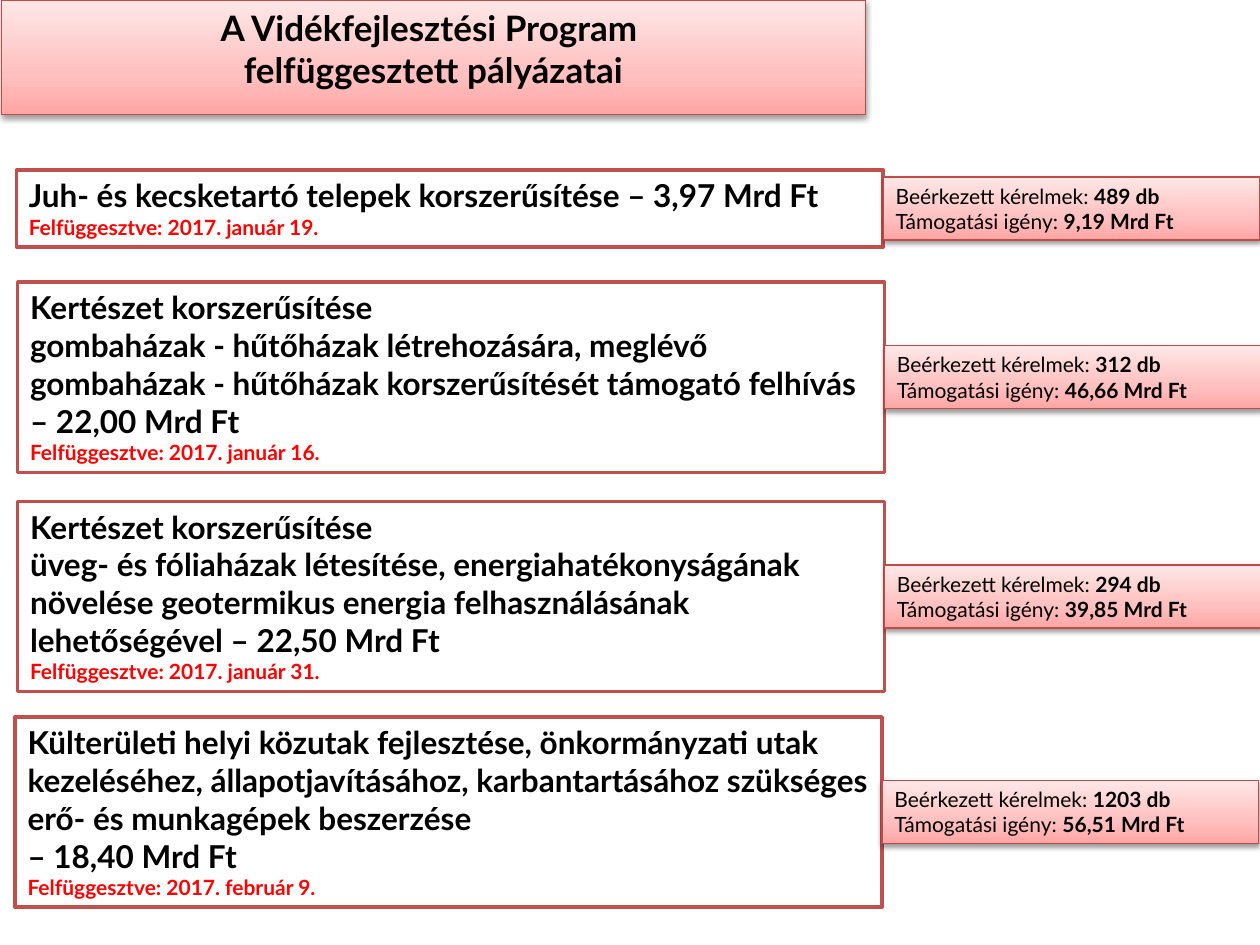
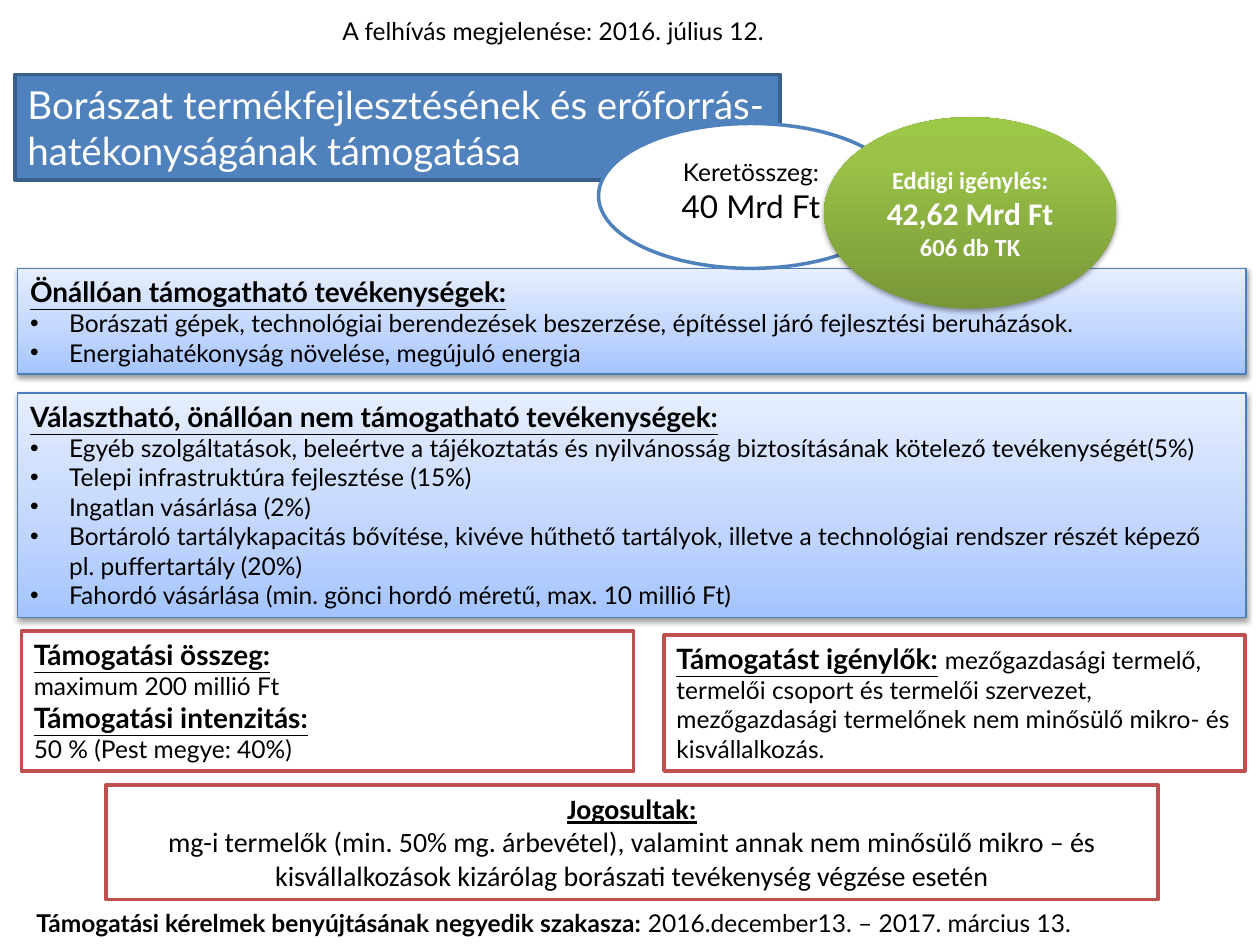
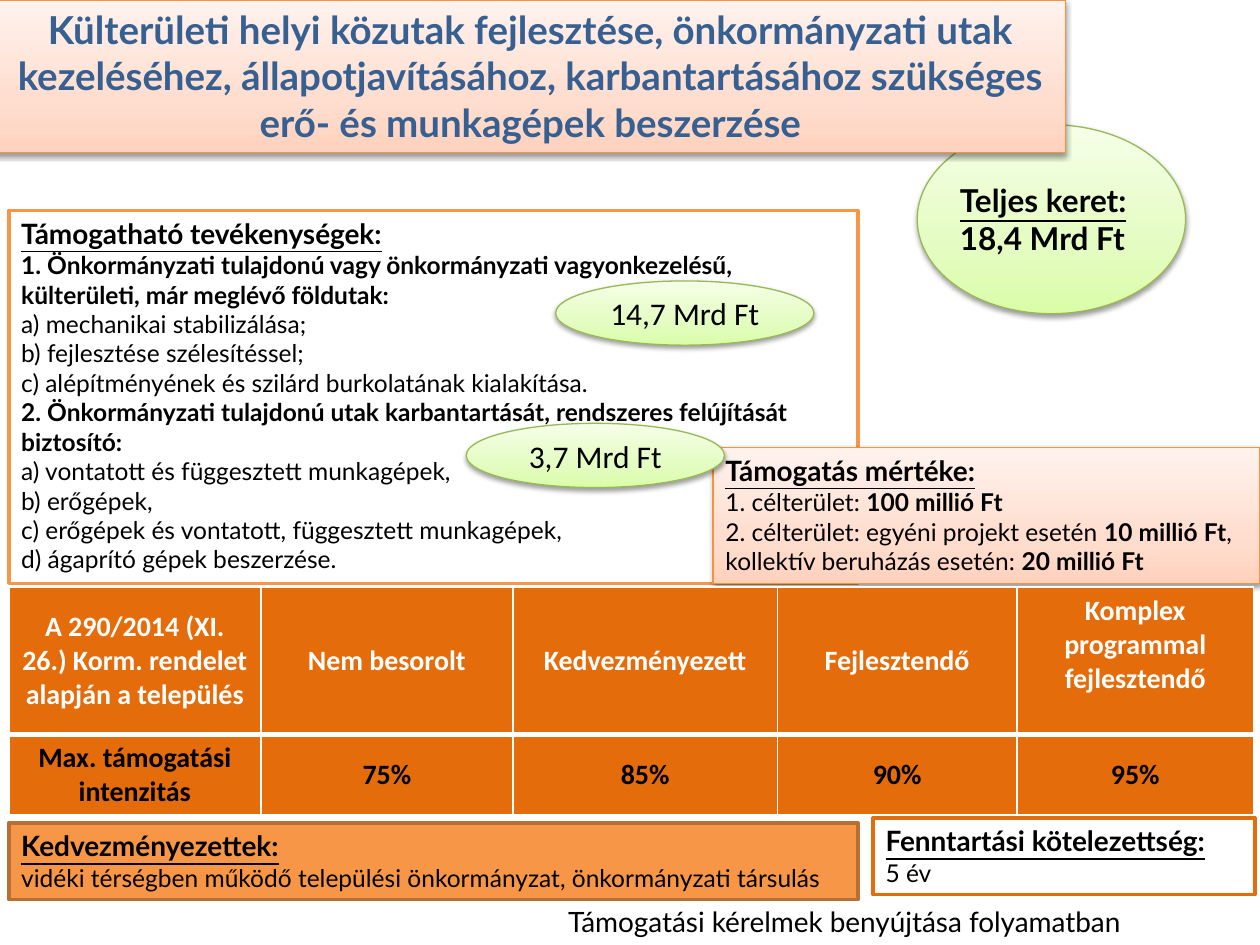
from dataclasses import dataclass
from lxml import etree
from pptx import Presentation
from pptx.dml.color import RGBColor
from pptx.enum.shapes import MSO_SHAPE
from pptx.enum.text import MSO_ANCHOR, PP_ALIGN
from pptx.oxml.ns import qn
from pptx.util import Inches, Pt

BLACK, WHITE, RED = "000000", "FFFFFF", "FF0000"
CRIMSON, BLUE, ORANGE, DEEP_ORANGE = "C0504D", "4F81BD", "F79646", "E46C0A"
PINK_GRADIENT = [(0, "FFA6A5"), (35, "FFC0BF"), (100, "FFE7E7")]
BLUE_GRADIENT = [(0, "A4C4FF"), (35, "BFD4FF"), (100, "E6EEFF")]
PEACH_GRADIENT = [(0, "FFD2BD"), (35, "FFDED0"), (100, "FFF2ED")]
LIME_GRADIENT = [(0, "DAFDA7"), (35, "E4FCC2"), (100, "F5FFE7")]
GREEN_GRADIENT = [(0, "779737"), (80, "9BC348"), (100, "9DC746")]
PINK_PANEL = {"fill": PINK_GRADIENT, "line": "BF4C48", "line_width": 0.75}
BLUE_PANEL = {"fill": BLUE_GRADIENT, "line": "4B7EBC", "line_width": 0.75}
PEACH_PANEL = {"fill": PEACH_GRADIENT, "line": "F69240", "line_width": 0.75}
LIME_OVAL = {"fill": LIME_GRADIENT, "line": "98B955", "line_width": 0.75, "kind": MSO_SHAPE.OVAL}


@dataclass
class Box:
    """A rectangle on the slide, in inches."""
    left: float
    top: float
    width: float
    height: float

    def lengths(self):
        """Return the four measures as lengths."""
        return [Inches(value) for value in (self.left, self.top, self.width, self.height)]


@dataclass
class Run:
    """A stretch of text in one style."""
    text: str
    size: float = 14
    bold: bool = False
    color: str = BLACK
    underline: bool = False


def heading(text, size=16):
    """Return an underlined bold run."""
    return Run(text, size, True, underline=True)


def bold(text, size=14, color=BLACK):
    """Return a bold run."""
    return Run(text, size, True, color)


def rgb(color):
    """Turn a hex string into a colour."""
    return RGBColor.from_string(color)


def add_bullet(paragraph):
    """Give a paragraph a hanging round bullet."""
    properties = paragraph._p.get_or_add_pPr()
    properties.set("marL", str(Inches(0.31)))
    properties.set("indent", str(-Inches(0.31)))
    font = etree.SubElement(properties, qn("a:buFont"))
    font.set("typeface", "Arial")
    etree.SubElement(properties, qn("a:buChar")).set("char", "•")


def write(frame, paragraphs, align=PP_ALIGN.LEFT, font="Lato", bullets=False):
    """Fill a text frame; each paragraph is a run or a list of runs."""
    for index, runs in enumerate(paragraphs):
        paragraph = frame.add_paragraph() if index else frame.paragraphs[0]
        paragraph.alignment = align
        if bullets and index:
            add_bullet(paragraph)
        for item in runs if isinstance(runs, list) else [runs]:
            run = paragraph.add_run()
            run.text = item.text
            run.font.name = font
            run.font.size = Pt(item.size)
            run.font.bold = item.bold
            run.font.underline = item.underline
            run.font.color.rgb = rgb(item.color)


def paint_gradient(shape, stops):
    """Fill a shape with a gradient that rises from its bottom edge."""
    shape.fill.gradient()
    shape.fill.gradient_angle = 90
    stop_list = shape.element.spPr.find(qn("a:gradFill")).find(qn("a:gsLst"))
    for stop in list(stop_list):
        stop_list.remove(stop)
    for position, color in stops:
        stop = etree.SubElement(stop_list, qn("a:gs"), pos=str(position * 1000))
        etree.SubElement(stop, qn("a:srgbClr"), val=color)


def add_soft_shadow(shape, opacity=38):
    """Give a shape a soft shadow below it."""
    effects = shape.element.spPr.find(qn("a:effectLst"))
    shadow = etree.SubElement(effects, qn("a:outerShdw"), blurRad=str(Pt(3.1)),
                              dist=str(Pt(1.6)), dir="5400000", rotWithShape="0")
    color = etree.SubElement(shadow, qn("a:srgbClr"), val=BLACK)
    etree.SubElement(color, qn("a:alpha"), val=str(opacity * 1000))


def add_panel(slide, box, paragraphs=(), fill=WHITE, line=CRIMSON, line_width=2,
              kind=MSO_SHAPE.RECTANGLE, **text_style):
    """Draw a panel with text; a gradient fill brings a shadow."""
    shape = slide.shapes.add_shape(kind, *box.lengths())
    shape.shadow.inherit = False
    if isinstance(fill, list):
        paint_gradient(shape, fill)
        add_soft_shadow(shape)
    else:
        shape.fill.solid()
        shape.fill.fore_color.rgb = rgb(fill)
    if line:
        shape.line.color.rgb = rgb(line)
        shape.line.width = Pt(line_width)
    else:
        shape.line.fill.background()
    frame = shape.text_frame
    frame.word_wrap = True
    is_oval = kind == MSO_SHAPE.OVAL
    frame.vertical_anchor = MSO_ANCHOR.MIDDLE if is_oval else MSO_ANCHOR.TOP
    write(frame, paragraphs, **text_style)


def add_label(slide, box, paragraphs, **text_style):
    """Place text without a frame."""
    frame = slide.shapes.add_textbox(*box.lengths()).text_frame
    frame.word_wrap = True
    write(frame, paragraphs, **text_style)


def add_suspended_call(slide, box, lines, date, requests, demand):
    """Draw a suspended call with its figures centred on the right edge."""
    paragraphs = [bold(line, 18) for line in lines]
    add_panel(slide, box, paragraphs + [bold(f"Felfüggesztve: {date}", 12, RED)])
    badge_height = 0.5
    badge = Box(box.left + box.width, box.top + (box.height - badge_height) / 2, 2.99, badge_height)
    add_panel(slide, badge, [
        [Run("Beérkezett kérelmek: ", 12), bold(requests, 12)],
        [Run("Támogatási igény: ", 12), bold(demand, 12)],
    ], **PINK_PANEL)


def build_suspended_calls(slide):
    """Build the overview of suspended calls."""
    add_panel(slide, Box(0.01, 0, 6.86, 0.91), [
        bold("A Vidékfejlesztési Program ", 20), bold("felfüggesztett pályázatai", 20),
    ], align=PP_ALIGN.CENTER, **PINK_PANEL)
    calls = [
        (0.13, 1.35, 0.61, ["Juh- és kecsketartó telepek korszerűsítése – 3,97 Mrd Ft"],
         "2017. január 19.", "489 db", "9,19 Mrd Ft"),
        (0.14, 2.24, 1.51,
         ["Kertészet korszerűsítése",
          "gombaházak - hűtőházak létrehozására, meglévő gombaházak - hűtőházak "
          "korszerűsítését támogató felhívás – 22,00 Mrd Ft"],
         "2017. január 16.", "312 db", "46,66 Mrd Ft"),
        (0.14, 3.98, 1.51,
         ["Kertészet korszerűsítése",
          "üveg- és fóliaházak létesítése, energiahatékonyságának növelése geotermikus "
          "energia felhasználásának lehetőségével – 22,50 Mrd Ft"],
         "2017. január 31.", "294 db", "39,85 Mrd Ft"),
        (0.12, 5.69, 1.51,
         ["Külterületi helyi közutak fejlesztése, önkormányzati utak kezeléséhez, "
          "állapotjavításához, karbantartásához szükséges erő- és munkagépek beszerzése",
          "– 18,40 Mrd Ft"],
         "2017. február 9.", "1203 db", "56,51 Mrd Ft"),
    ]
    for left, top, height, *details in calls:
        add_suspended_call(slide, Box(left, top, 6.88, height), *details)


def add_budget_ovals(slide, box):
    """Draw the budget oval and the demand oval that overlaps it."""
    add_panel(slide, Box(box.left, box.top + 0.05, 2.42, 1.15), line=BLUE, kind=MSO_SHAPE.OVAL)
    add_label(slide, Box(box.left + 0.52, box.top + 0.27, 1.38, 0.64),
              [Run("Keretösszeg:"), Run("40 Mrd Ft", 18)], align=PP_ALIGN.CENTER)
    demand_width = 2.32
    add_panel(slide, Box(box.left + box.width - demand_width, box.top, demand_width, box.height), [
        bold("Eddigi igénylés:", 14, WHITE), bold("42,62 Mrd Ft", 18, WHITE),
        bold("606 db TK", 14, WHITE),
    ], fill=GREEN_GRADIENT, line=None, kind=MSO_SHAPE.OVAL, align=PP_ALIGN.CENTER, font="Calibri")


def build_winery_call(slide):
    """Build the details of the winery call."""
    add_label(slide, Box(2.62, 0.08, 3.64, 0.34), [Run("A felhívás megjelenése: 2016. július 12.")])
    add_panel(slide, Box(0.12, 0.59, 6.07, 0.84), [
        Run("Borászat termékfejlesztésének és erőforrás-hatékonyságának támogatása", 22, color=WHITE),
    ], fill=BLUE, line="3A5F8C")
    add_panel(slide, Box(0.14, 2.13, 9.75, 0.84), [
        heading("Önállóan támogatható tevékenységek:"),
        Run("Borászati gépek, technológiai berendezések beszerzése, építéssel járó "
            "fejlesztési beruházások."),
        Run("Energiahatékonyság növelése, megújuló energia"),
    ], bullets=True, **BLUE_PANEL)
    add_panel(slide, Box(0.14, 3.12, 9.75, 1.78), [
        heading("Választható, önállóan nem támogatható tevékenységek:"),
        Run("Egyéb szolgáltatások, beleértve a tájékoztatás és nyilvánosság biztosításának "
            "kötelező tevékenységét(5%)"),
        Run("Telepi infrastruktúra fejlesztése (15%)"),
        Run("Ingatlan vásárlása (2%)"),
        Run("Bortároló tartálykapacitás bővítése, kivéve hűthető tartályok, illetve a "
            "technológiai rendszer részét képező pl. puffertartály (20%)"),
        Run("Fahordó vásárlása (min. gönci hordó méretű, max. 10 millió Ft)"),
    ], bullets=True, **BLUE_PANEL)
    add_budget_ovals(slide, Box(4.75, 0.93, 4.11, 1.52))
    add_panel(slide, Box(0.17, 5.01, 4.86, 1.11), [
        heading("Támogatási összeg:"), Run("maximum 200 millió Ft"),
        heading("Támogatási intenzitás:"), Run("50 % (Pest megye: 40%)"),
    ])
    add_panel(slide, Box(5.27, 5.04, 4.61, 1.08), [[
        heading("Támogatást igénylők:"), bold(" ", 16),
        Run("mezőgazdasági termelő, termelői csoport és termelői szervezet, "
            "mezőgazdasági termelőnek nem minősülő mikro- és kisvállalkozás."),
    ]])
    add_panel(slide, Box(0.84, 6.23, 8.35, 0.91), [
        heading("Jogosultak:"),
        Run("mg-i termelők (min. 50% mg. árbevétel), valamint annak nem minősülő mikro – és "
            "kisvállalkozások kizárólag borászati tevékenység végzése esetén", 16),
    ], align=PP_ALIGN.CENTER, font="Calibri")
    add_label(slide, Box(0.19, 7.16, 9.21, 0.34), [[
        bold("Támogatási kérelmek benyújtásának negyedik szakasza:"),
        Run(" 2016.december13. – 2017. március 13."),
    ]])


def format_cell(cell, text, color, borders):
    """Style one table cell, with border widths by side."""
    cell_properties = cell._tc.get_or_add_tcPr()
    for side, width in borders.items():
        border = etree.SubElement(cell_properties, qn(f"a:ln{side}"), w=str(Pt(width)))
        fill = etree.SubElement(border, qn("a:solidFill"))
        etree.SubElement(fill, qn("a:srgbClr"), val=WHITE)
    cell.fill.solid()
    cell.fill.fore_color.rgb = rgb(DEEP_ORANGE)
    cell.vertical_anchor = MSO_ANCHOR.MIDDLE
    write(cell.text_frame, [bold(text, 16, color)], align=PP_ALIGN.CENTER, font="Calibri")


def add_intensity_table(slide, box):
    """Draw the table of support intensity by type of settlement."""
    rows = [
        ["A 290/2014 (XI. 26.) Korm. rendelet alapján a település", "Nem besorolt",
         "Kedvezményezett", "Fejlesztendő", "Komplex programmal fejlesztendő"],
        ["Max. támogatási intenzitás", "75%", "85%", "90%", "95%"],
    ]
    table = slide.shapes.add_table(2, 5, *box.lengths()).table
    for column, width in zip(table.columns, [2, 2, 2.1, 1.9, 1.88]):
        column.width = Inches(width)
    header_height = 1.17
    for row, height in zip(table.rows, [header_height, box.height - header_height]):
        row.height = Inches(height)
    styles = [(WHITE, {"L": 1, "R": 1, "T": 1, "B": 3}), (BLACK, {"L": 1, "R": 1, "T": 3, "B": 1})]
    for row_index, (texts, style) in enumerate(zip(rows, styles)):
        for column_index, text in enumerate(texts):
            format_cell(table.cell(row_index, column_index), text, *style)
    table.cell(0, 4).vertical_anchor = MSO_ANCHOR.TOP


def add_activities(slide, box):
    """Draw the supported activities."""
    add_panel(slide, box, [
        heading("Támogatható tevékenységek:"),
        bold("1. Önkormányzati tulajdonú vagy önkormányzati vagyonkezelésű, külterületi, "
             "már meglévő földutak:"),
        Run("a) mechanikai stabilizálása;"),
        Run("b) fejlesztése szélesítéssel;"),
        Run("c) alépítményének és szilárd burkolatának kialakítása."),
        bold("2. Önkormányzati tulajdonú utak karbantartását, rendszeres felújítását biztosító:"),
        Run("a) vontatott és függesztett munkagépek,"),
        Run("b) erőgépek,"),
        Run("c) erőgépek és vontatott, függesztett munkagépek,"),
        Run("d) ágaprító gépek beszerzése."),
    ], line=ORANGE)


def build_road_call(slide):
    """Build the details of the rural road call."""
    add_panel(slide, Box(7.28, 0.99, 2.13, 1.5), **LIME_OVAL)
    add_panel(slide, Box(-0.04, 0, 8.5, 1.21), [
        bold("Külterületi helyi közutak fejlesztése, önkormányzati utak kezeléséhez, "
             "állapotjavításához, karbantartásához szükséges erő- és munkagépek beszerzése",
             22, "376092"),
    ], align=PP_ALIGN.CENTER, **PEACH_PANEL)
    add_label(slide, Box(7.52, 1.39, 1.66, 0.71),
              [heading("Teljes keret:", 18), bold("18,4 Mrd Ft", 18)])
    add_activities(slide, Box(0.07, 1.67, 6.74, 2.96))
    add_panel(slide, Box(5.66, 3.55, 4.34, 1.08), [
        heading("Támogatás mértéke:"),
        [Run("1. célterület: "), bold("100 millió Ft")],
        [Run("2. célterület: egyéni projekt esetén "), bold("10 millió Ft"),
         Run(", kollektív beruházás esetén: "), bold("20 millió Ft")],
    ], **PEACH_PANEL)
    for left, top, amount in [(4.41, 2.23, "14,7 Mrd Ft"), (3.7, 3.36, "3,7 Mrd Ft")]:
        add_panel(slide, Box(left, top, 2.05, 0.51), [Run(amount, 18)],
                  align=PP_ALIGN.CENTER, font="Calibri", **LIME_OVAL)
    add_intensity_table(slide, Box(0.07, 4.66, 9.88, 1.8))
    add_panel(slide, Box(0.07, 6.53, 6.74, 0.61), [
        heading("Kedvezményezettek:"),
        Run("vidéki térségben működő települési önkormányzat, önkormányzati társulás"),
    ], fill=ORANGE, line="B76F34")
    add_panel(slide, Box(6.93, 6.49, 3.03, 0.61),
              [heading("Fenntartási kötelezettség:"), Run("5 év")], line=DEEP_ORANGE)
    add_label(slide, Box(4.41, 7.13, 4.78, 0.37),
              [Run("Támogatási kérelmek benyújtása folyamatban", 16)])


def main():
    """Build and save the presentation."""
    presentation = Presentation()
    presentation.slide_width = Inches(10)
    presentation.slide_height = Inches(7.5)
    for build in (build_suspended_calls, build_winery_call, build_road_call):
        build(presentation.slides.add_slide(presentation.slide_layouts[6]))
    presentation.save("out.pptx")


if __name__ == "__main__":
    main()
